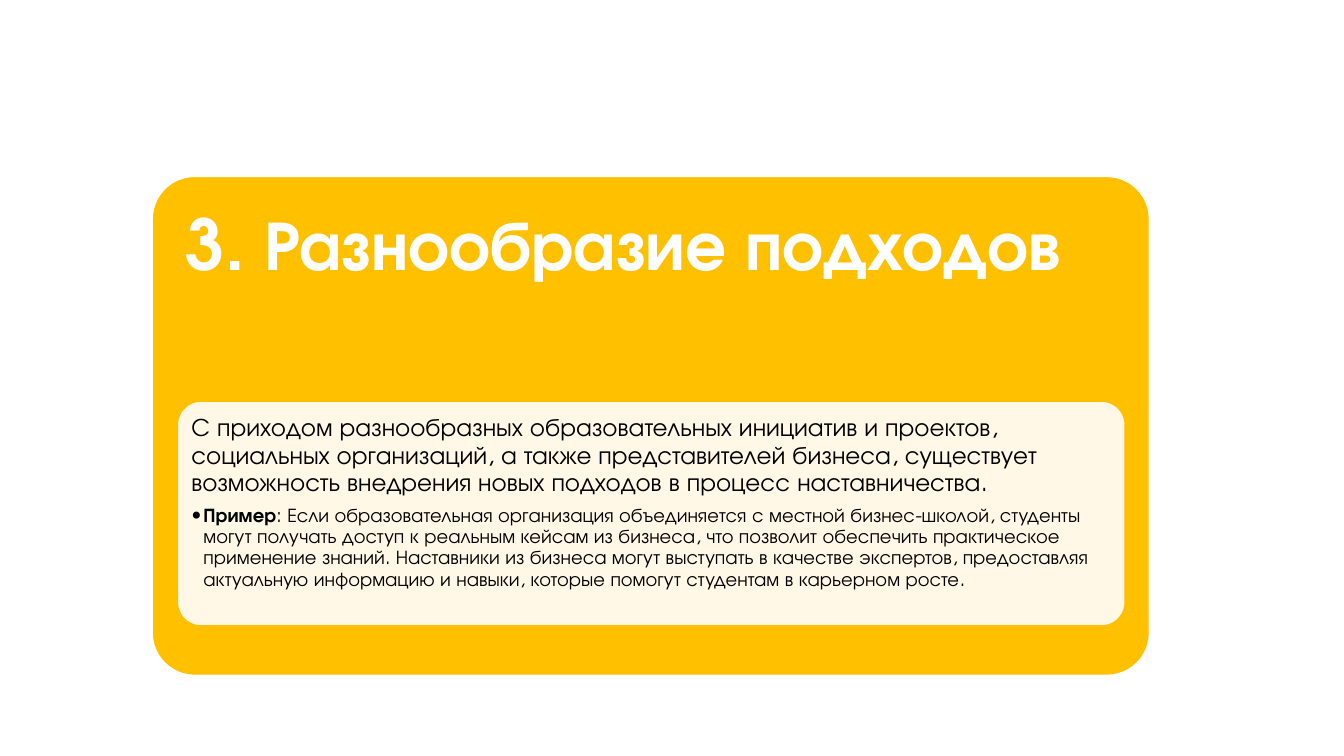
import pptx
import pptx.util
import pptx.dml.color
import pptx.enum.shapes
import pptx.enum.text
import pptx.oxml.ns
import lxml.etree

PX = 9144  # 100 px to the inch
THEME = {
    "font": "TeX Gyre Adventor",
    "gold": "FFC000", "white": "FFFFFF", "black": "000000",
    "title": 50, "lead": 18, "note": 14,
}


def color(name):
    return pptx.dml.color.RGBColor.from_string(THEME[name])


def add_tag(parent, tag, **values):
    return lxml.etree.SubElement(parent, pptx.oxml.ns.qn(tag), values)


title = "3. Разнообразие подходов"
lead = ("С приходом разнообразных образовательных инициатив и проектов, "
        "социальных организаций, а также представителей бизнеса, существует "
        "возможность внедрения новых подходов в процесс наставничества.")
note = (": Если образовательная организация объединяется с местной бизнес-школой, "
        "студенты могут получать доступ к реальным кейсам из бизнеса, что позволит "
        "обеспечить практическое применение знаний. Наставники из бизнеса могут "
        "выступать в качестве экспертов, предоставляя актуальную информацию и навыки, "
        "которые помогут студентам в карьерном росте.")

# Each paragraph: size, colour, space after, bullet, runs of (text, bold)
panels = [
    {"box": (151, 175, 989, 495), "round": 0.085, "fill": "gold", "line": "white",
     "alpha": 100, "pad": 21,
     "paras": [("title", "white", 0, False, [(title, True)])]},
    {"box": (176, 398, 940, 223), "round": 0.105, "fill": "white", "line": "gold",
     "alpha": 90, "pad": 7,
     "paras": [("lead", "black", 6.3, False, [(lead, False)]),
               ("note", "black", 2.1, True, [("Пример", True), (note, False)])]},
]

deck = pptx.Presentation()
deck.slide_width, deck.slide_height = 1333 * PX, 750 * PX
slide = deck.slides.add_slide(deck.slide_layouts[6])

for panel in panels:
    card = slide.shapes.add_shape(
        pptx.enum.shapes.MSO_SHAPE.ROUNDED_RECTANGLE,
        *[side * PX for side in panel["box"]])
    card.adjustments[0] = panel["round"]
    card.shadow.inherit = False
    card.fill.solid()
    card.fill.fore_color.rgb = color(panel["fill"])
    if panel["alpha"] < 100:
        tint = card.fill._xPr.find(".//" + pptx.oxml.ns.qn("a:srgbClr"))
        add_tag(tint, "a:alpha", val=str(panel["alpha"] * 1000))
    card.line.color.rgb = color(panel["line"])
    card.line.width = pptx.util.Pt(1)

    frame = card.text_frame
    pad = panel["pad"] * PX
    format = {"word_wrap": True, "vertical_anchor": pptx.enum.text.MSO_ANCHOR.TOP,
              "margin_left": pad, "margin_top": pad,
              "margin_right": pad, "margin_bottom": pad}
    for key, value in format.items():
        setattr(frame, key, value)

    for index, (size, ink, after, bullet, runs) in enumerate(panel["paras"]):
        para = frame.add_paragraph() if index else frame.paragraphs[0]
        layout = {"alignment": pptx.enum.text.PP_ALIGN.LEFT, "line_spacing": 0.9,
                  "space_after": pptx.util.Pt(after)}
        for key, value in layout.items():
            setattr(para, key, value)
        if bullet:
            para.level = 1
            props = para._p.get_or_add_pPr()
            props.set("marL", str(12 * PX))
            props.set("indent", str(-12 * PX))
            add_tag(props, "a:buFont", typeface=THEME["font"])
            add_tag(props, "a:buChar", char="•")
        for text, bold in runs:
            run = para.add_run()
            run.text = text
            style = {"name": THEME["font"], "size": pptx.util.Pt(THEME[size]), "bold": bold}
            for key, value in style.items():
                setattr(run.font, key, value)
            run.font.color.rgb = color(ink)

deck.save("out.pptx")
